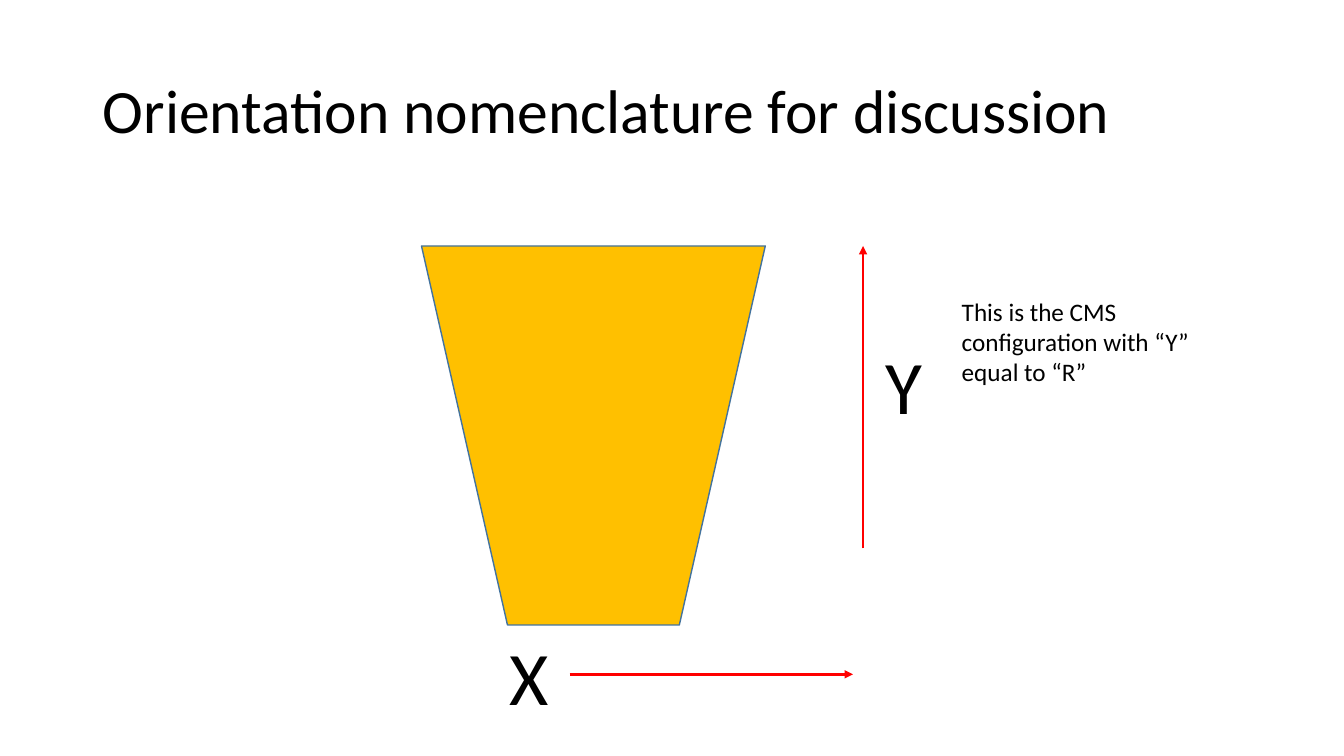
from pptx import Presentation
from pptx.dml.color import RGBColor
from pptx.enum.shapes import MSO_CONNECTOR, MSO_SHAPE
from pptx.enum.text import MSO_ANCHOR, MSO_AUTO_SIZE
from pptx.oxml.ns import qn
from pptx.util import Inches, Pt
from lxml import etree

STRAIGHT = MSO_CONNECTOR.STRAIGHT
TRAPEZOID = MSO_SHAPE.TRAPEZOID
MIDDLE = MSO_ANCHOR.MIDDLE
GROW = MSO_AUTO_SIZE.SHAPE_TO_FIT_TEXT

FONT = "Calibri"
BLACK, RED, GOLD, BLUE = "000000", "FF0000", "FFC000", "43739E"


def color(hex_string):
    return RGBColor.from_string(hex_string)


def add_run(paragraph, text, size):
    run = paragraph.add_run()
    run.text = text
    run.font.name = FONT
    run.font.size = Pt(size)
    run.font.color.rgb = color(BLACK)


def add_text(slide, box, text, size, wrap=True):
    shape = slide.shapes.add_textbox(*map(Inches, box))
    shape.text_frame.word_wrap = wrap
    shape.text_frame.auto_size = GROW
    add_run(shape.text_frame.paragraphs[0], text, size)


def add_arrow(slide, start, end):
    arrow = slide.shapes.add_connector(STRAIGHT, *map(Inches, start + end))
    arrow.line.color.rgb = color(RED)
    arrow.line.width = Pt(2)
    line = arrow.line._get_or_add_ln()
    etree.SubElement(line, qn("a:tailEnd"), type="triangle")
    etree.SubElement(arrow._element.spPr, qn("a:effectLst"))


def place_title(slide, box, text):
    title = slide.shapes.title
    title.left, title.top, title.width, title.height = map(Inches, box)
    title.text_frame.vertical_anchor = MIDDLE
    paragraph = title.text_frame.paragraphs[0]
    paragraph.line_spacing = 0.9
    add_run(paragraph, text, 44)


def draw_chamber(slide, box):
    """Trapezoid with its X axis below and its Y axis to the right."""
    left, top, width, height = box
    right, bottom = left + width, top + height

    # Wide edge on top
    chamber = slide.shapes.add_shape(TRAPEZOID, *map(Inches, box))
    chamber.rotation = 180
    chamber.shadow.inherit = False
    chamber.fill.solid()
    chamber.fill.fore_color.rgb = color(GOLD)
    chamber.line.color.rgb = color(BLUE)
    chamber.line.width = Pt(1)

    # X axis
    x_level = bottom + 0.49
    add_arrow(slide, (left + 1.47, x_level), (left + 4.28, x_level))
    add_text(slide, (left + 0.77, bottom, 0.59, 1.01), "X", 54, wrap=False)

    # Y axis
    y_position = right + 0.97
    add_arrow(slide, (y_position, top + 3), (y_position, top))
    add_text(slide, (y_position + 0.12, top + 0.87, 0.44, 1.01), "Y", 54)


def main():
    presentation = Presentation()
    presentation.slide_width = Inches(13.33)
    presentation.slide_height = Inches(7.5)
    slide = presentation.slides.add_slide(presentation.slide_layouts.get_by_name("Title Only"))

    place_title(slide, (0.92, 0.4, 11.5, 1.45), "Orientation nomenclature for discussion")
    slide.shapes.title.text_frame.paragraphs[0].alignment = 1
    draw_chamber(slide, (4.18, 2.44, 3.41, 3.76))
    add_text(slide, (9.44, 2.89, 2.59, 1.01),
             "This is the CMS configuration with “Y” equal to “R”", 18)
    presentation.save("out.pptx")


if __name__ == "__main__":
    main()
